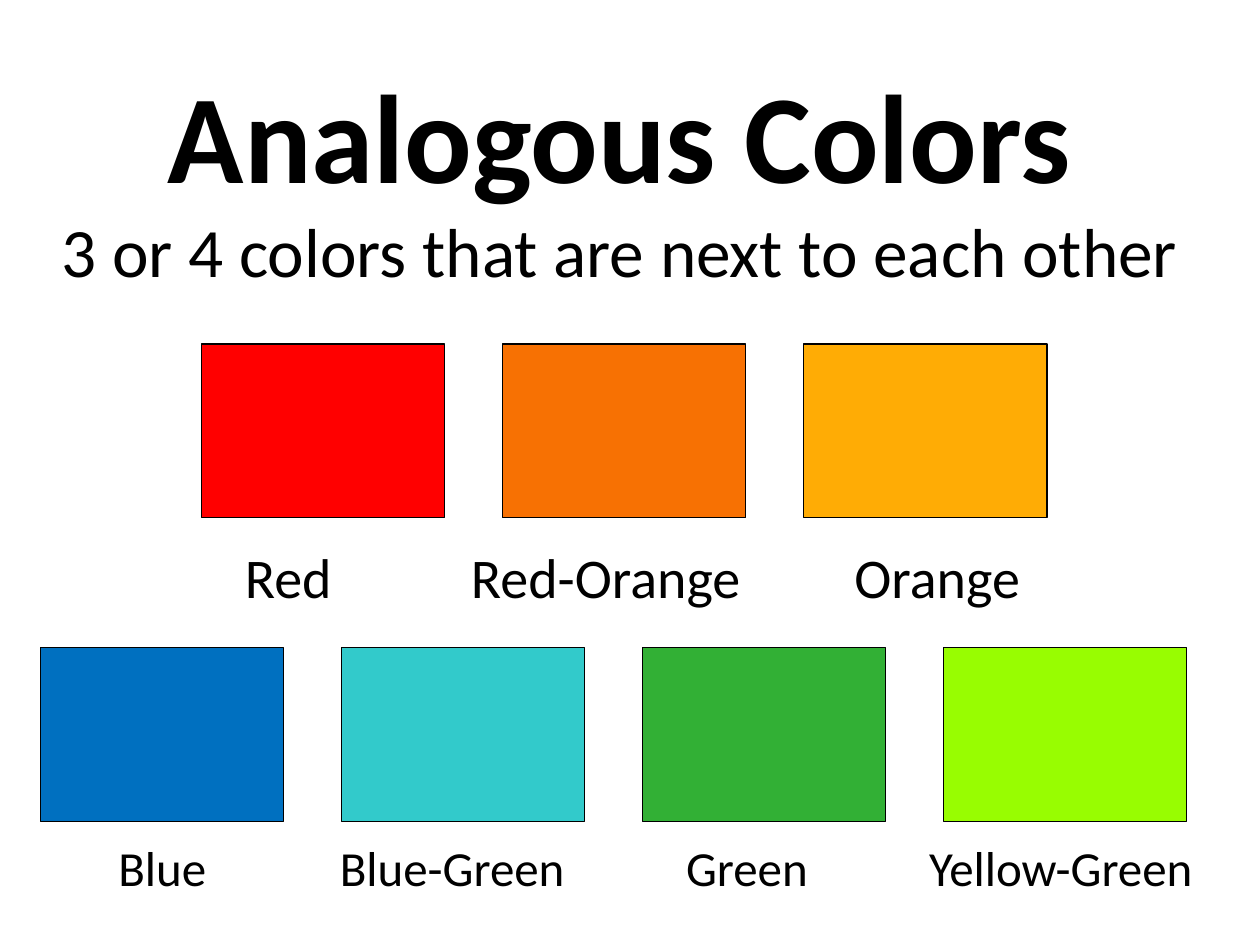
from lxml import etree
from pptx import Presentation
from pptx.dml.color import RGBColor
from pptx.enum.shapes import MSO_SHAPE
from pptx.enum.text import MSO_ANCHOR, PP_ALIGN
from pptx.oxml.ns import qn
from pptx.util import Inches, Pt

RECT = MSO_SHAPE.RECTANGLE
MIDDLE = MSO_ANCHOR.MIDDLE
CENTER = PP_ALIGN.CENTER

FONT = "Calibri"
COLORS = {
    "ink": "000000",
    "Red": "FF0000",
    "Red-Orange": "F77103",
    "Orange": "FFAC05",
    "Blue": "0070C0",
    "Blue-Green": "32CACB",
    "Green": "32B035",
    "Yellow-Green": "98FD01",
}
TITLE = [("Analogous Colors", 72, True),
         ("3 or 4 colors that are next to each other", 39.6, False)]
ROWS = [
    {"names": ["Red", "Red-Orange", "Orange"],
     "left": 1.6, "top": 2.73, "label_box": (1.25, 4.26, 7.06, 0.64),
     "size": 32, "tabs": [0.94, 3.46, 6.09]},
    {"names": ["Blue", "Blue-Green", "Green", "Yellow-Green"],
     "left": 0.32, "top": 5.14, "label_box": (0.32, 6.6, 9.53, 0.57),
     "size": 28, "tabs": [0.87, 3.17, 5.51, 8.0]},
]
SWATCH_W, SWATCH_H, PITCH = 1.93, 1.38, 2.39


def rgb(name):
    return RGBColor.from_string(COLORS[name])


def add_box(s, box):
    tf = s.shapes.add_textbox(*map(Inches, box)).text_frame
    tf.word_wrap = True
    return tf


def add_run(p, text, size, bold=False):
    r = p.add_run()
    r.text = text
    r.font.name = FONT
    r.font.size = Pt(size)
    r.font.bold = bold
    r.font.color.rgb = rgb("ink")


def add_swatch(s, name, left, top):
    sp = s.shapes.add_shape(RECT, Inches(left), Inches(top),
                            Inches(SWATCH_W), Inches(SWATCH_H))
    sp.shadow.inherit = False
    sp.fill.solid()
    sp.fill.fore_color.rgb = rgb(name)
    sp.line.color.rgb = rgb("ink")
    sp.line.width = Pt(0.75)


def add_labels(s, row):
    p = add_box(s, row["label_box"]).paragraphs[0]
    tabs = etree.SubElement(p._p.get_or_add_pPr(), qn("a:tabLst"))
    for pos in row["tabs"]:
        etree.SubElement(tabs, qn("a:tab"), pos=str(Inches(pos)), algn="ctr")
    for name in row["names"]:
        add_run(p, "\t" + name, row["size"])


def main():
    prs = Presentation()
    prs.slide_width, prs.slide_height = Inches(10), Inches(7.5)
    s = prs.slides.add_slide(prs.slide_layouts[6])

    tf = add_box(s, (0.17, 0.66, 9.5, 1.45))
    tf.vertical_anchor = MIDDLE
    p = tf.paragraphs[0]
    p.alignment = CENTER
    for i, (text, size, bold) in enumerate(TITLE):
        if i:
            p.add_line_break()
        add_run(p, text, size, bold)

    for row in ROWS:
        for i, name in enumerate(row["names"]):
            add_swatch(s, name, row["left"] + i * PITCH, row["top"])
        add_labels(s, row)

    prs.save("out.pptx")


if __name__ == "__main__":
    main()
